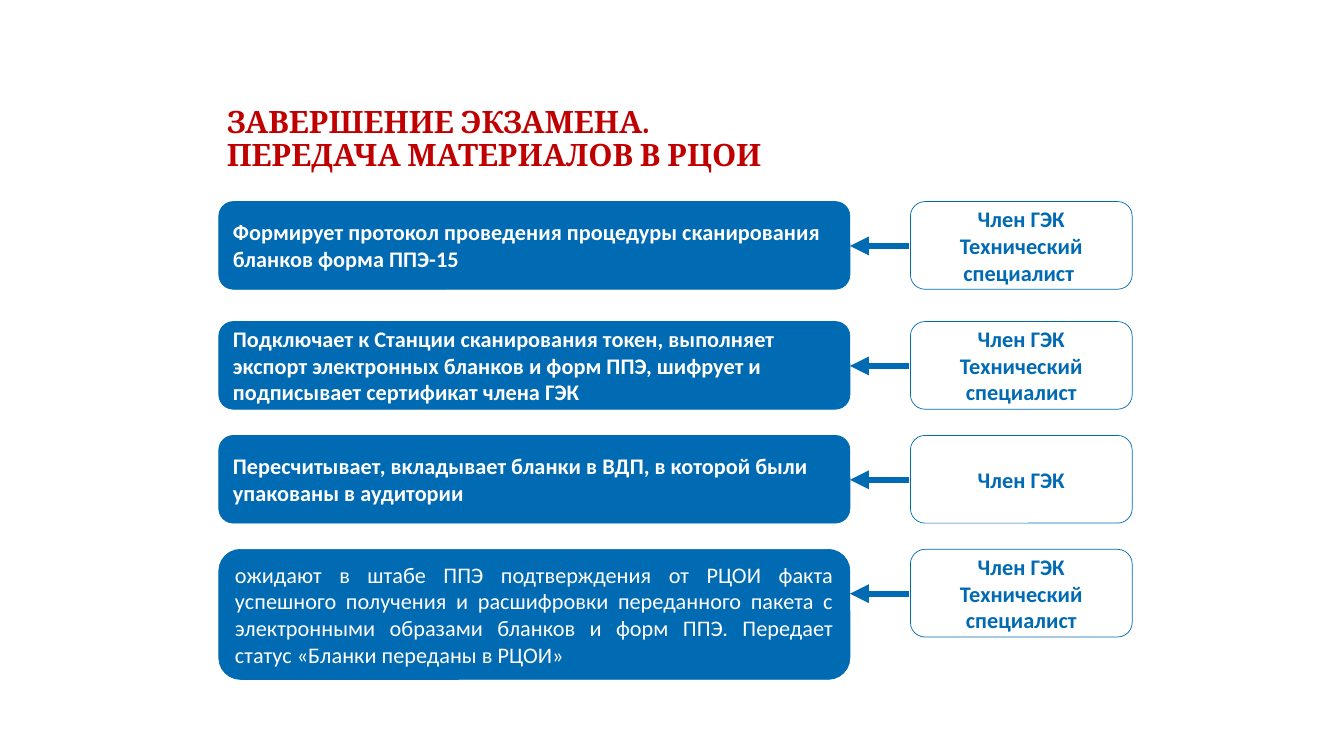
"""Builds the slide on finishing the exam and handing materials over."""
from lxml.etree import SubElement
from pptx import Presentation
from pptx.dml.color import RGBColor
from pptx.enum.shapes import MSO_CONNECTOR, MSO_SHAPE
from pptx.enum.text import MSO_ANCHOR, MSO_AUTO_SIZE, PP_ALIGN
from pptx.oxml.ns import qn
from pptx.util import Inches, Pt

BLUE, WHITE, RED = "006AB3", "FFFFFF", "C00000"


def rgb(value):
    return RGBColor.from_string(value)


def add_box(s, x, y, w, h, fill, lines, align, color, bold=True):
    sp = s.shapes.add_shape(MSO_SHAPE.ROUNDED_RECTANGLE, Inches(x), Inches(y), Inches(w), Inches(h))
    sp.shadow.inherit = False
    sp.fill.solid()
    sp.fill.fore_color.rgb = rgb(fill)
    sp.line.color.rgb = rgb(BLUE)
    sp.line.width = Pt(0.5)
    tf = sp.text_frame
    tf.word_wrap = True
    tf.vertical_anchor = MSO_ANCHOR.MIDDLE
    tf.text = "\n".join(lines)
    for p in tf.paragraphs:
        p.alignment = align
        for name, value in {"name": "Calibri", "size": Pt(15.9), "bold": bold}.items():
            setattr(p.font, name, value)
        p.font.color.rgb = rgb(color)


prs = Presentation()
prs.slide_width, prs.slide_height = Inches(13.33), Inches(7.5)
s = prs.slides.add_slide(prs.slide_layouts[5])

title = s.shapes.title
for name, value in {"left": 2.15, "top": 1.06, "width": 9, "height": 0.66}.items():
    setattr(title, name, Inches(value))
tf = title.text_frame
for name, value in {"word_wrap": True, "auto_size": MSO_AUTO_SIZE.NONE,
                    "vertical_anchor": MSO_ANCHOR.MIDDLE}.items():
    setattr(tf, name, value)
p = tf.paragraphs[0]
p.text = "ЗАВЕРШЕНИЕ ЭКЗАМЕНА. \vПЕРЕДАЧА МАТЕРИАЛОВ В РЦОИ"
p.alignment = PP_ALIGN.LEFT
p.line_spacing = 0.9
for name, value in {"name": "Cambria", "size": Pt(22), "bold": True}.items():
    setattr(p.font, name, value)
p.font.color.rgb = rgb(RED)

member, specialist = "Член ГЭК", "Технический специалист"
steps = [
    (2.0, 0.87, "Формирует протокол проведения процедуры сканирования бланков форма ППЭ-15",
     [member, specialist + " "], PP_ALIGN.LEFT, True),
    (3.19, 0.87, "Подключает к Станции сканирования токен, выполняет экспорт электронных бланков "
     "и форм ППЭ, шифрует и подписывает сертификат члена ГЭК",
     [member, specialist], PP_ALIGN.LEFT, True),
    (4.32, 0.87, "Пересчитывает, вкладывает бланки в ВДП, в которой были упакованы в аудитории",
     [member], PP_ALIGN.LEFT, True),
    (5.45, 1.29, "ожидают в штабе ППЭ подтверждения от РЦОИ факта успешного получения и расшифровки "
     "переданного пакета с электронными образами бланков и форм ППЭ. Передает статус "
     "«Бланки переданы в РЦОИ»",
     [member, specialist], PP_ALIGN.JUSTIFY, False),
]
for y, h, action, roles, align, bold in steps:
    add_box(s, 2.17, y, 6.26, h, BLUE, [action], align, WHITE, bold)
    add_box(s, 9.03, y, 2.2, 0.87, WHITE, roles, PP_ALIGN.CENTER, BLUE)
    mid = Inches(y + 0.44)
    arrow = s.shapes.add_connector(MSO_CONNECTOR.STRAIGHT, Inches(9.02), mid, Inches(8.43), mid)
    arrow.line.color.rgb = rgb(BLUE)
    arrow.line.width = Pt(4.5)
    SubElement(arrow.line._get_or_add_ln(), qn("a:tailEnd"), type="triangle")
    SubElement(arrow._element.spPr, qn("a:effectLst"))

prs.save("out.pptx")
